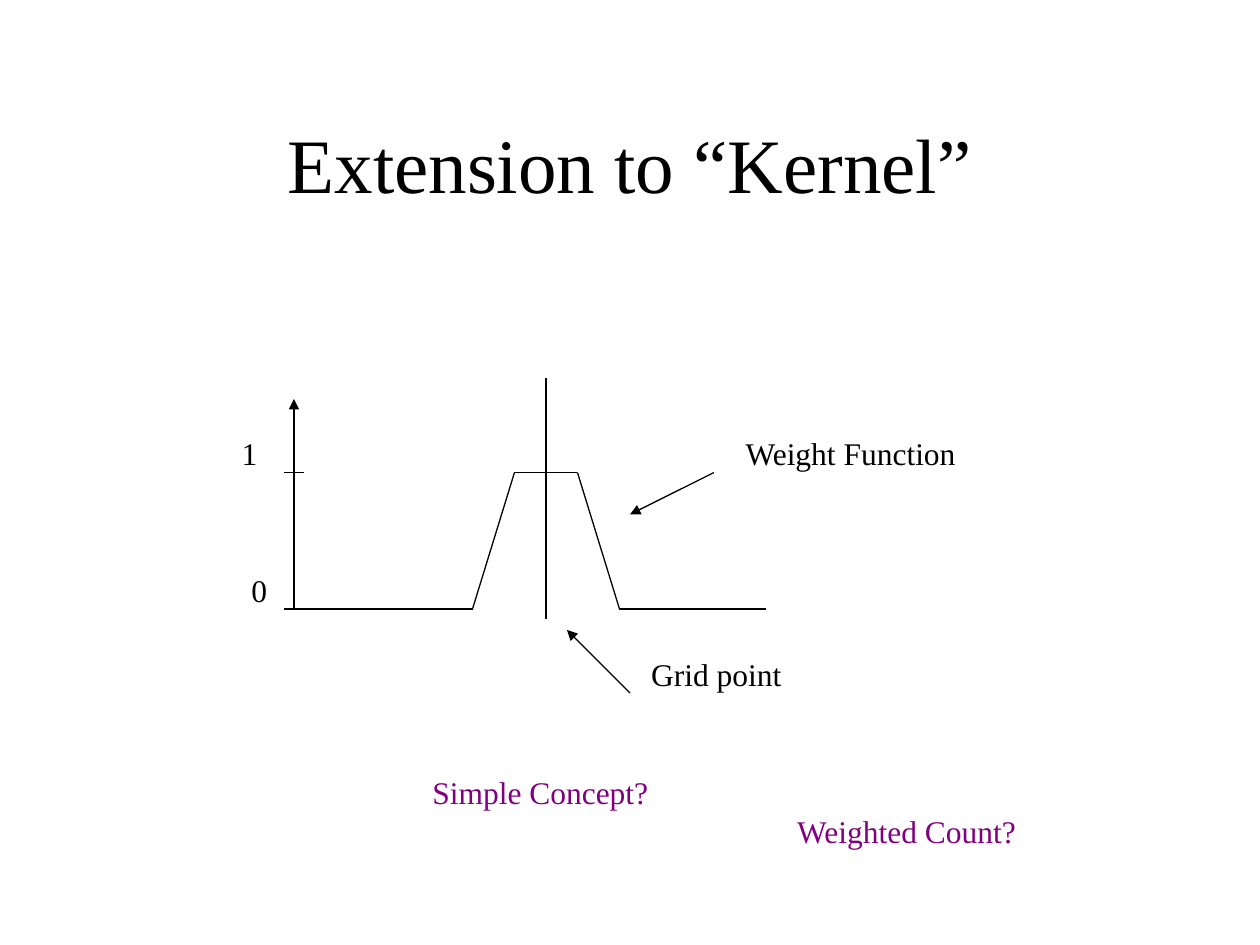
from dataclasses import dataclass
from itertools import pairwise

from lxml.etree import SubElement
from pptx import Presentation
from pptx.dml.color import RGBColor
from pptx.enum.shapes import MSO_CONNECTOR
from pptx.enum.text import MSO_ANCHOR, PP_ALIGN
from pptx.oxml.ns import qn
from pptx.util import Pt

BLACK = RGBColor(0x00, 0x00, 0x00)
PURPLE = RGBColor(0x80, 0x00, 0x80)
FONT = "Times New Roman"

# Plot levels and axis positions, in points
ZERO_Y, ONE_Y = 348, 270
AXIS_X, GRID_X = 168, 312
TICK = 6


@dataclass
class Line:
    x1: float
    y1: float
    x2: float
    y2: float
    arrow: bool = False


@dataclass
class Label:
    text: str
    left: float
    top: float
    width: float
    color: RGBColor = BLACK


def style_run(r, size: float, color: RGBColor) -> None:
    r.font.name = FONT
    r.font.size = Pt(size)
    r.font.color.rgb = color


def draw_line(s, line: Line) -> None:
    c = s.shapes.add_connector(MSO_CONNECTOR.STRAIGHT, Pt(line.x1), Pt(line.y1),
                               Pt(line.x2), Pt(line.y2))
    c.line.color.rgb = BLACK
    c.line.width = Pt(0.75)
    if line.arrow:
        SubElement(c.line._get_or_add_ln(), qn("a:tailEnd"), type="triangle")
    SubElement(c._element.spPr, qn("a:effectLst"))


def draw_label(s, label: Label) -> None:
    sp = s.shapes.add_textbox(Pt(label.left), Pt(label.top), Pt(label.width), Pt(36))
    tf = sp.text_frame
    tf.word_wrap = True
    tf.text = label.text
    style_run(tf.paragraphs[0].runs[0], 18, label.color)


def draw_title(s, text: str) -> None:
    sp = s.shapes.title
    sp.left, sp.top, sp.width, sp.height = Pt(54), Pt(48), Pt(612), Pt(90)
    tf = sp.text_frame
    tf.text = text
    tf.vertical_anchor = MSO_ANCHOR.MIDDLE
    p = tf.paragraphs[0]
    p.alignment = PP_ALIGN.CENTER
    style_run(p.runs[0], 44, BLACK)


# Weight function: flat, up, plateau, down, flat
CURVE = [(186, ZERO_Y), (270, ZERO_Y), (294, ONE_Y),
         (330, ONE_Y), (354, ZERO_Y), (438, ZERO_Y)]

LINES = [Line(*a, *b) for a, b in pairwise(CURVE)]
LINES += [Line(AXIS_X - TICK, y, AXIS_X + TICK, y) for y in (ONE_Y, ZERO_Y)]
LINES += [
    Line(AXIS_X, ZERO_Y, AXIS_X, 228, arrow=True),  # weight axis
    Line(192, ZERO_Y, AXIS_X, ZERO_Y),              # start of the base line
    Line(GRID_X, 354, GRID_X, 216),                 # grid point
    Line(360, 396, 324, 360, arrow=True),           # pointer to grid point
    Line(408, ONE_Y, 360, 294, arrow=True),         # pointer to curve
]

LABELS = [
    Label("0", 136.5, 322.5, 27),
    Label("1", 131, 244.5, 27),
    Label("Grid point", 365, 370.5, 114),
    Label("Weight Function", 419, 244.5, 182),
    Label("Simple Concept?", 240, 438, 185, PURPLE),
    Label("Weighted Count?", 448.5, 460.5, 183, PURPLE),
]


def main() -> None:
    prs = Presentation()
    prs.slide_width, prs.slide_height = Pt(720), Pt(540)
    s = prs.slides.add_slide(prs.slide_layouts[5])  # title only
    draw_title(s, "Extension to “Kernel”")
    for line in LINES:
        draw_line(s, line)
    for label in LABELS:
        draw_label(s, label)
    prs.save("out.pptx")


if __name__ == "__main__":
    main()
